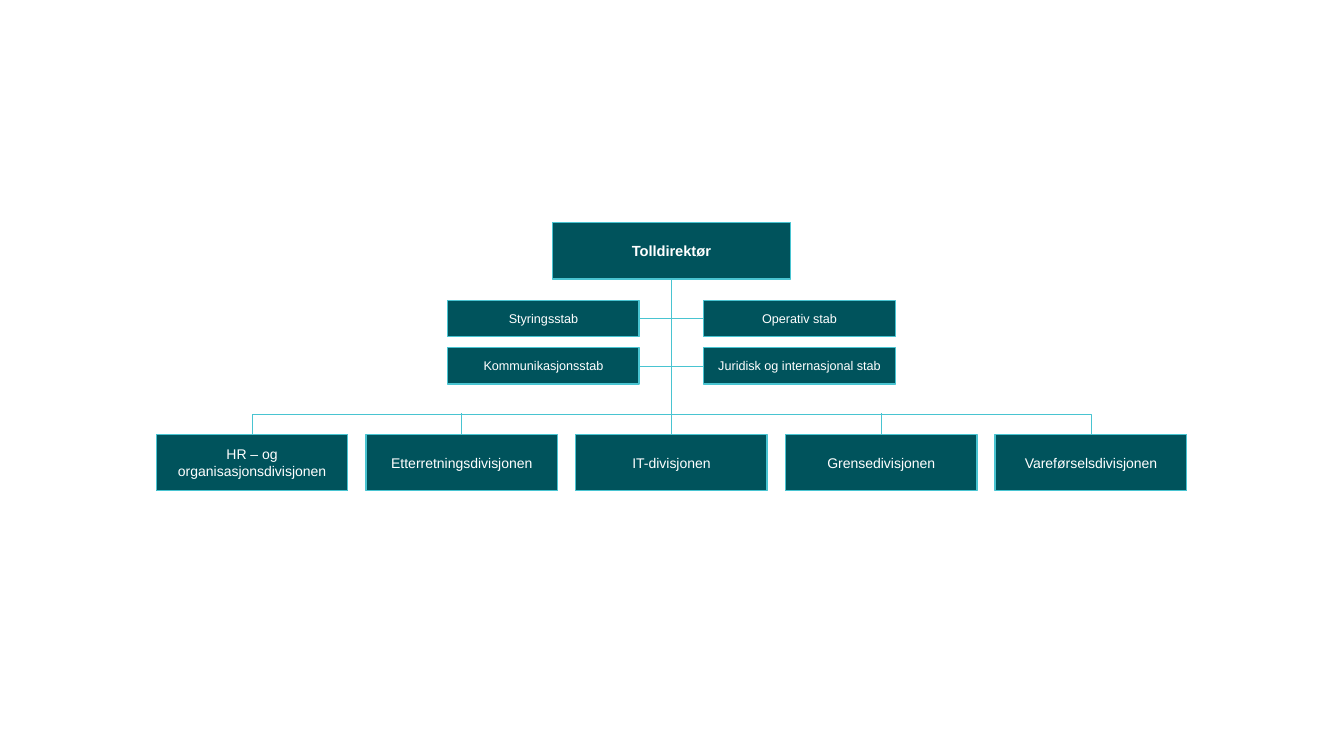
from lxml import etree
from pptx import Presentation
from pptx.dml.color import RGBColor
from pptx.enum.shapes import MSO_CONNECTOR as CONN, MSO_SHAPE as SHAPE
from pptx.enum.text import MSO_ANCHOR as ANCHOR, PP_ALIGN as ALIGN
from pptx.oxml.ns import qn
from pptx.util import Pt

PX = 9144
TEAL, AQUA, WHITE = "00535C", "49C4D1", "FFFFFF"
TOP, LEFT, RIGHT, BOTTOM = 0, 1, 3, 2
DIVISIONS = ["HR – og organisasjonsdivisjonen", "Etterretningsdivisjonen",
             "IT-divisjonen", "Grensedivisjonen", "Vareførselsdivisjonen"]
STAFFS = [("Styringsstab", "Operativ stab"),
          ("Kommunikasjonsstab", "Juridisk og internasjonal stab")]


def px(n):
    return int(n * PX)


def colour(hex_code):
    return RGBColor.from_string(hex_code)


def add_box(s, text, x, y, w, h, size, bold=None):
    sp = s.shapes.add_shape(SHAPE.RECTANGLE, px(x), px(y), px(w), px(h))
    sp.shadow.inherit = False
    sp.fill.solid()
    sp.fill.fore_color.rgb = colour(TEAL)
    sp.line.color.rgb = colour(AQUA)
    sp.line.width = Pt(1)
    tf = sp.text_frame
    tf.word_wrap = True
    tf.vertical_anchor = ANCHOR.MIDDLE
    p = tf.paragraphs[0]
    p.alignment = ALIGN.CENTER
    r = p.add_run()
    r.text = text
    r.font.name = "Arial"
    r.font.size = Pt(size)
    r.font.bold = bold
    r.font.color.rgb = colour(WHITE)
    return sp


def add_line(s, x1, y1, x2, y2, kind=CONN.STRAIGHT):
    line = s.shapes.add_connector(kind, px(x1), px(y1), px(x2), px(y2))
    line.line.color.rgb = colour(AQUA)
    line.line.width = Pt(0.5)
    etree.SubElement(line._element.spPr, qn("a:effectLst"))
    return line


def add_bracket(s, x1, x2, y, rise):
    mid, half = (x1 + x2) // 2, (x2 - x1) // 2
    bracket = add_line(s, mid + 1, y + half, mid, y - half, CONN.ELBOW)
    sp_pr = bracket._element.spPr
    sp_pr.find(qn("a:xfrm")).set("rot", "5400000")
    adjustments = sp_pr.find(qn("a:prstGeom")).get_or_add_avLst()
    etree.SubElement(adjustments, qn("a:gd"), name="adj1", fmla=f"val {rise * 100000}")


def add_divisions(s, x, y, w, h, step, rise):
    boxes = [add_box(s, name, x + i * step, y, w, h, 10)
             for i, name in enumerate(DIVISIONS)]
    centres = [x + i * step + w // 2 for i in range(len(boxes))]
    add_bracket(s, centres[0], centres[-1], y, rise)
    for i in (1, 3):
        drop = add_line(s, centres[i], y - rise, centres[i], y)
        drop.end_connect(boxes[i], TOP)
    return boxes


def add_staffs(s, centre, y, w, h, gap, step):
    for row, (left_name, right_name) in enumerate(STAFFS):
        top = y + row * step
        mid = top + h // 2
        left = add_box(s, left_name, centre - gap - w, top, w, h, 9)
        right = add_box(s, right_name, centre + gap, top, w, h, 9)
        link = add_line(s, centre - gap, mid, centre, mid)
        link.begin_connect(left, RIGHT)
        link = add_line(s, centre, mid, centre + gap, mid)
        link.end_connect(right, LEFT)


def add_chart_of_offices(s, x, y):
    centre = x + 511
    divisions = add_divisions(s, x, y + 210, 190, 56, 208, 21)
    director = add_box(s, "Tolldirektør", centre - 118, y, 236, 56, 10.5, True)
    trunk = add_line(s, centre, y + 56, centre, y + 210)
    trunk.begin_connect(director, BOTTOM)
    trunk.end_connect(divisions[2], TOP)
    add_staffs(s, centre, y + 77, 190, 36, 32, 47)


def main():
    prs = Presentation()
    prs.slide_width, prs.slide_height = px(1333), px(750)
    s = prs.slides.add_slide(prs.slide_layouts[6])
    s.background.fill.solid()
    s.background.fill.fore_color.rgb = colour(WHITE)
    add_chart_of_offices(s, 155, 221)
    prs.save("out.pptx")


if __name__ == "__main__":
    main()
